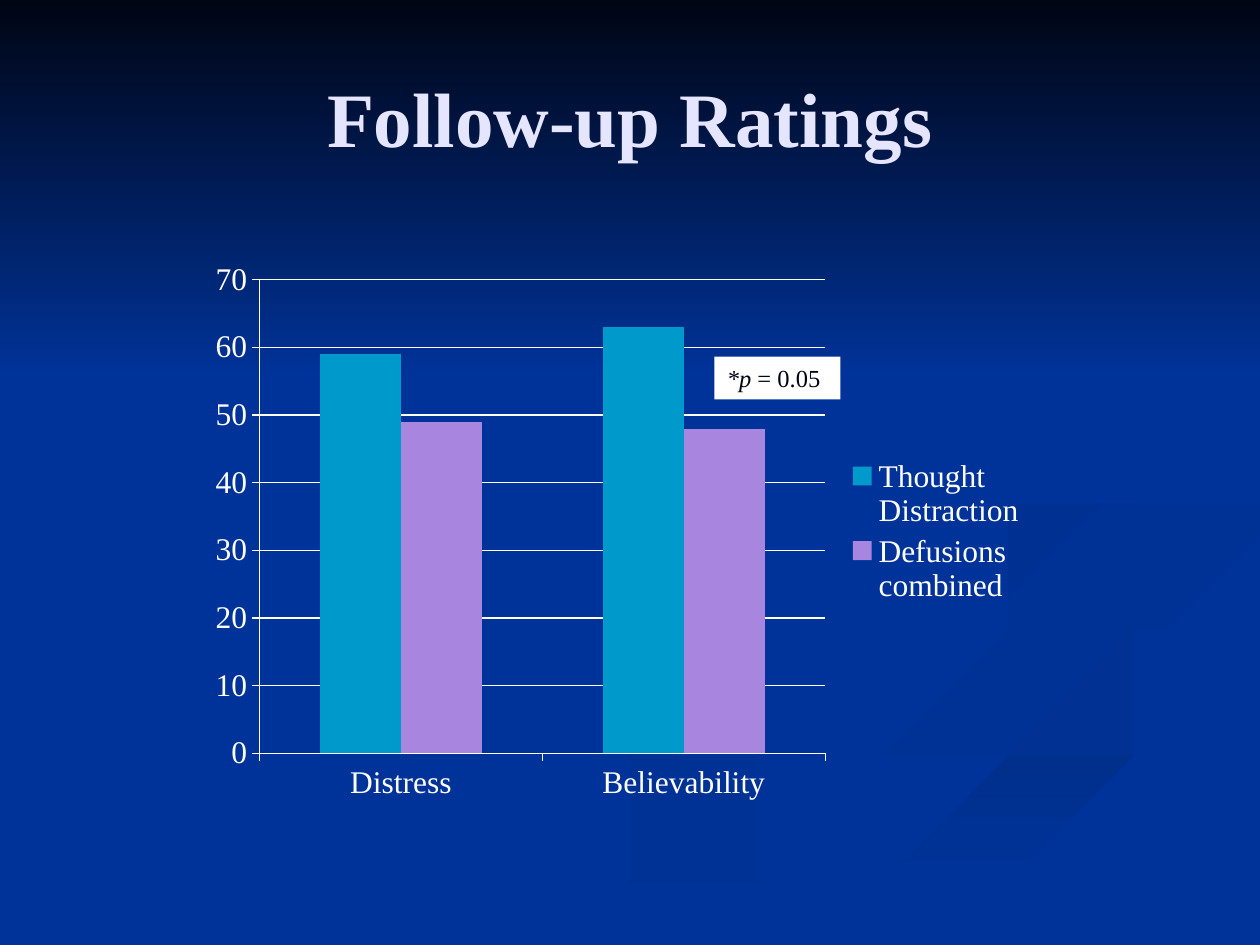
from lxml.etree import SubElement
from pptx import Presentation
from pptx.chart.data import CategoryChartData
from pptx.dml.color import RGBColor
from pptx.enum.chart import XL_CHART_TYPE as CHART, XL_LEGEND_POSITION as LEGEND, XL_TICK_MARK as TICK
from pptx.enum.shapes import MSO_SHAPE as SHAPE
from pptx.enum.text import MSO_ANCHOR as ANCHOR, PP_ALIGN as ALIGN
from pptx.oxml.ns import qn
from pptx.util import Inches, Pt

FONT = "Times New Roman"
BLUE, NIGHT, WHITE, LAVENDER = "003399", "000514", "FFFFFF", "E5E5FF"
TITLE = "Follow-up Ratings"
CATEGORIES = ["Distress", "Believability"]
SERIES = [
    ("Thought Distraction", (59, 63), "0099CC"),
    ("Defusions combined", (49, 48), "A886E0"),
]
NOTE = [("*p ", True), ("= 0.05", False)]
CHART_BOX = (1.58, 2, 6.67, 4.44)
PLOT_BOX = (2.06, 2.22, 4.49, 3.76)

RIBBONS = [
    ((BLUE, "003193"), 0,
     [(5.75, 4.59), (5.94, 4.85), (6.82, 5.19), (7.81, 5.53), (8, 5.81), (7.56, 6.14), (5.64, 6.65), (3.61, 7.49)],
     [(3, 7.49), (4.58, 6.74), (7.27, 6.02), (7.86, 5.66), (7.41, 5.39), (6.31, 5.05), (5.7, 4.7)]),
    ((BLUE, "003193"), 45,
     [(7.24, 4.64), (7.58, 4.98), (9.05, 5.4), (9.43, 5.7), (8.94, 6.05)],
     [(8.94, 6.05), (9.18, 5.81), (8.8, 5.49), (7.66, 5.12), (7.24, 4.66)]),
    (("002F8C", BLUE), 90,
     [(9.98, 5.81), (9.03, 6.1), (6.96, 6.69), (5.03, 7.49)],
     [(5.71, 7.49), (7.22, 6.82), (9.98, 6.09)]),
    ((BLUE, BLUE), 0,
     [(9.99, 3.87), (8.3, 4.15), (7.25, 4.64), (7.75, 5.03), (9.05, 5.4), (9.43, 5.7), (8.69, 6.11), (6.63, 6.68),
      (4.77, 7.49)],
     [(5.19, 7.47), (6.96, 6.69), (9.99, 5.81)],
     [(9.99, 5.38), (8.48, 5.03), (7.81, 4.63), (8.35, 4.3), (9.99, 4.02)]),
    (("003091", BLUE), 45,
     [(9.98, 4.02), (8.49, 4.27), (7.81, 4.6), (8.26, 4.96)],
     [(8.26, 4.96), (8.05, 4.72), (8.59, 4.43), (9.98, 4.2)]),
    (("002F8E", BLUE), 45,
     [(7.62, 2.33), (8.54, 2.83), (8.94, 3.44), (8.41, 3.96), (6.83, 4.3), (5.93, 4.7), (6.22, 5)],
     [(6.22, 5), (5.77, 4.62), (6.49, 4.2), (8.3, 3.82), (8.89, 3.35), (8.46, 2.79), (7.62, 2.33)]),
    ((NIGHT, BLUE), 90, [(0, 0), (10, 0)], [(10, 3.08), (0, 3.08)]),
]


def rgb(value):
    """Turn a hex string into a colour."""
    return RGBColor.from_string(value)


def style_font(font, size, color, bold=False, italic=False):
    """Set the typeface, size, colour and style of a font."""
    font.name, font.size, font.bold, font.italic = FONT, Pt(size), bold, italic
    font.color.rgb = rgb(color)


def smooth_edge(knots, steps=6):
    """Sample a Catmull-Rom curve through the knots."""
    if len(knots) == 2:
        return knots
    padded = [knots[0], *knots, knots[-1]]
    points = []
    for a, b, c, d in zip(padded, padded[1:], padded[2:], padded[3:]):
        for t in (step / steps for step in range(steps)):
            points.append(tuple(
                q + t / 2 * (r - p + t * (2 * p - 5 * q + 4 * r - s + t * (3 * q - p - 3 * r + s)))
                for p, q, r, s in zip(a, b, c, d)))
    return points + [knots[-1]]


def add_ribbon(slide, colors, angle, *edges):
    """Draw one closed outline with a two-colour gradient."""
    points = [point for edge in edges for point in smooth_edge(edge)]
    builder = slide.shapes.build_freeform(*points[0], scale=Inches(1))
    builder.add_line_segments(points[1:], close=True)
    sp = builder.convert_to_shape()
    sp.shadow.inherit = False
    sp.line.fill.background()
    sp.fill.gradient()
    sp.fill.gradient_angle = (360 - angle) % 360
    for stop, color, position in zip(sp.fill.gradient_stops, colors, (0, 1)):
        stop.color.rgb = rgb(color)
        stop.position = position


def add_title(slide):
    """Format the title and bring it in front of the backdrop."""
    title = slide.shapes.title
    slide.shapes._spTree.append(title._element)
    title.left, title.top, title.width, title.height = map(Inches, (0.5, 0.3, 9, 1.25))
    tf = title.text_frame
    tf.text, tf.vertical_anchor = TITLE, ANCHOR.MIDDLE
    p = tf.paragraphs[0]
    p.alignment = ALIGN.CENTER
    style_font(p.runs[0].font, 44, LAVENDER, bold=True)


def fix_plot_area(chart):
    """Place the inner plot area at PLOT_BOX."""
    left, top, width, height = CHART_BOX
    x, y, w, h = PLOT_BOX
    area = chart._chartSpace.chart.plotArea
    for old in area.findall(qn("c:layout")):
        area.remove(old)
    layout = area.makeelement(qn("c:layout"))
    area.insert(0, layout)
    manual = SubElement(layout, qn("c:manualLayout"))
    settings = [("layoutTarget", "inner"), ("xMode", "edge"), ("yMode", "edge"),
                ("x", (x - left) / width), ("y", (y - top) / height),
                ("w", w / width), ("h", h / height)]
    for tag, value in settings:
        SubElement(manual, qn(f"c:{tag}")).set("val", str(value))


def add_ratings_chart(slide):
    """Add the clustered columns."""
    data = CategoryChartData()
    data.categories = CATEGORIES
    for name, values, _ in SERIES:
        data.add_series(name, values)
    chart = slide.shapes.add_chart(CHART.COLUMN_CLUSTERED, *map(Inches, CHART_BOX), data).chart
    style_font(chart.font, 18, WHITE)
    chart.has_title = False
    chart.has_legend = True
    chart.legend.position = LEGEND.RIGHT
    chart.legend.include_in_layout = False
    plot = chart.plots[0]
    plot.gap_width, plot.overlap, plot.vary_by_categories = 150, 0, False
    for series, (_, _, color) in zip(plot.series, SERIES):
        series.format.fill.solid()
        series.format.fill.fore_color.rgb = rgb(color)
    value_axis = chart.value_axis
    value_axis.minimum_scale, value_axis.maximum_scale, value_axis.major_unit = 0, 70, 10
    value_axis.has_major_gridlines = True
    for axis in (chart.category_axis, value_axis):
        axis.major_tick_mark = TICK.OUTSIDE
    for part in (chart.category_axis, value_axis, value_axis.major_gridlines):
        part.format.line.color.rgb = rgb(WHITE)
        part.format.line.width = Pt(0.75)
    fix_plot_area(chart)


def add_note(slide):
    """Add the significance label."""
    sp = slide.shapes.add_shape(SHAPE.RECTANGLE, *map(Inches, (5.67, 2.83, 1, 0.34)))
    sp.shadow.inherit = False
    sp.fill.solid()
    sp.fill.fore_color.rgb = rgb(WHITE)
    sp.line.fill.background()
    tf = sp.text_frame
    tf.word_wrap, tf.vertical_anchor = False, ANCHOR.TOP
    p = tf.paragraphs[0]
    p.alignment = ALIGN.LEFT
    for text, italic in NOTE:
        r = p.add_run()
        r.text = text
        style_font(r.font, 14, NIGHT, italic=italic)


def main():
    """Build the slide and save it."""
    prs = Presentation()
    prs.slide_width, prs.slide_height = Inches(10), Inches(7.5)
    slide = prs.slides.add_slide(prs.slide_layouts[5])
    slide.background.fill.solid()
    slide.background.fill.fore_color.rgb = rgb(BLUE)
    for ribbon in RIBBONS:
        add_ribbon(slide, *ribbon)
    add_title(slide)
    add_ratings_chart(slide)
    add_note(slide)
    prs.save("out.pptx")


if __name__ == "__main__":
    main()
